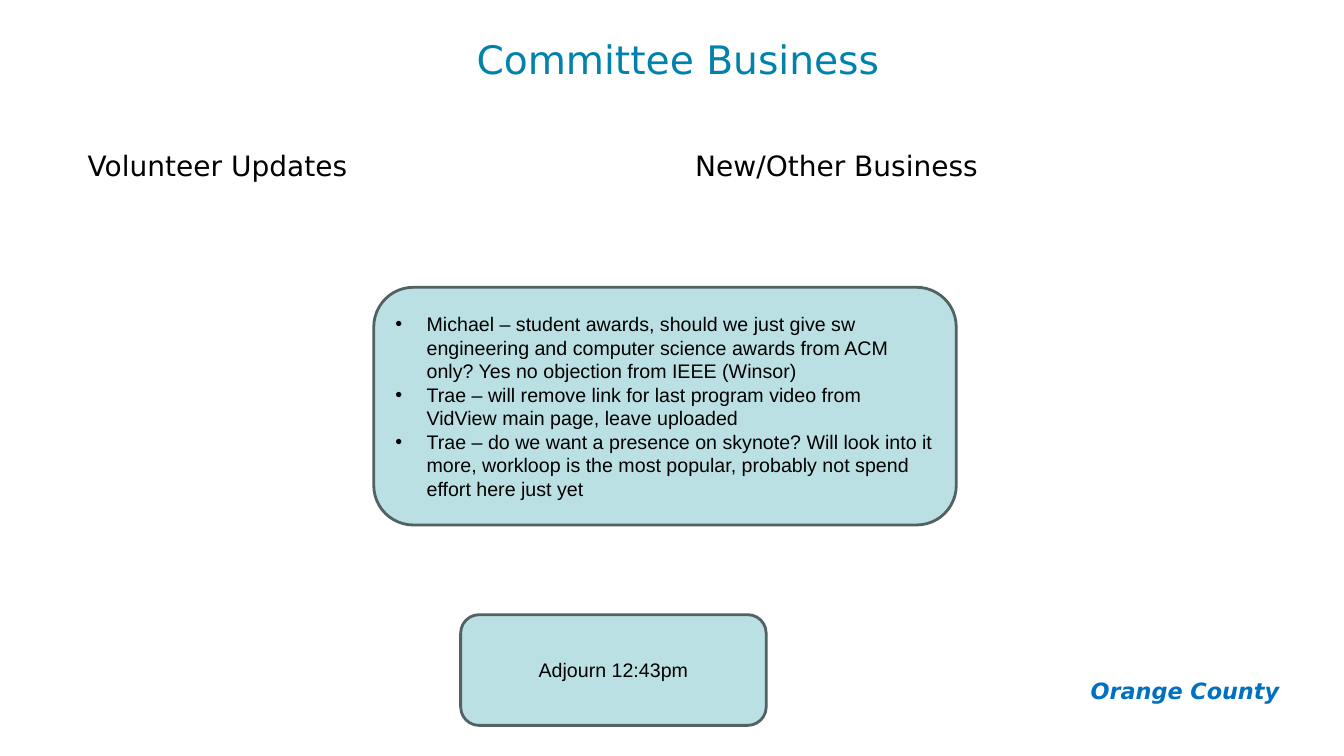
import pptx
import pptx.util
import pptx.dml.color
import pptx.enum.shapes
import pptx.enum.text
from lxml import etree
from pptx.oxml.ns import qn

Cm = pptx.util.Cm
Pt = pptx.util.Pt
RGBColor = pptx.dml.color.RGBColor
Align = pptx.enum.text.PP_ALIGN
Anchor = pptx.enum.text.MSO_ANCHOR

BLACK = RGBColor(0x00, 0x00, 0x00)
TEAL = RGBColor(0x01, 0x82, 0xAC)
BLUE = RGBColor(0x00, 0x70, 0xC0)
PALE_TEAL = RGBColor(0xBB, 0xE0, 0xE3)
SLATE = RGBColor(0x52, 0x62, 0x63)


class SlideBuilder:
    heading_font = "DejaVu Sans"
    note_font = "Arial"
    note_size = 14
    bullet_indent = Cm(0.79)

    def __init__(self, slide):
        self.slide = slide

    def add_text(self, paragraph, text, font_name, size, color, align, emphasis=False):
        paragraph.alignment = align
        run = paragraph.add_run()
        run.text = text
        run.font.name = font_name
        run.font.size = Pt(size)
        run.font.color.rgb = color
        run.font.bold = run.font.italic = emphasis

    def add_bullet(self, paragraph):
        properties = paragraph._p.get_or_add_pPr()
        properties.set("marL", str(self.bullet_indent))
        properties.set("indent", str(-self.bullet_indent))
        font = etree.SubElement(properties, qn("a:buFont"))
        font.set("typeface", self.note_font)
        bullet = etree.SubElement(properties, qn("a:buChar"))
        bullet.set("char", "•")

    def add_heading(self, text, left, top, width, height, size, color,
                    align=Align.LEFT, emphasis=False, margin=0.13):
        box = self.slide.shapes.add_textbox(Cm(left), Cm(top), Cm(width), Cm(height))
        frame = box.text_frame
        frame.word_wrap = True
        frame.margin_top = frame.margin_bottom = Cm(margin)
        self.add_text(frame.paragraphs[0], text, self.heading_font, size, color,
                      align, emphasis)

    def add_note(self, lines, left, top, width, height, bulleted=False):
        shape = self.slide.shapes.add_shape(
            pptx.enum.shapes.MSO_SHAPE.ROUNDED_RECTANGLE,
            Cm(left), Cm(top), Cm(width), Cm(height))
        shape.shadow.inherit = False
        shape.fill.solid()
        shape.fill.fore_color.rgb = PALE_TEAL
        shape.line.color.rgb = SLATE
        shape.line.width = Pt(2)
        frame = shape.text_frame
        frame.word_wrap = True
        frame.vertical_anchor = Anchor.MIDDLE
        for index, line in enumerate(lines):
            paragraph = frame.add_paragraph() if index else frame.paragraphs[0]
            if bulleted:
                self.add_bullet(paragraph)
            self.add_text(paragraph, line, self.note_font, self.note_size, BLACK,
                          Align.LEFT if bulleted else Align.CENTER)


def main():
    presentation = pptx.Presentation()
    presentation.slide_width = Cm(33.87)
    presentation.slide_height = Cm(19.05)
    builder = SlideBuilder(presentation.slides.add_slide(presentation.slide_layouts[6]))

    builder.add_heading("Orange County", 26.7, 16.81, 5.79, 1.19, 16, BLUE,
                        Align.RIGHT, emphasis=True, margin=0.25)
    builder.add_heading("Committee Business", 1.98, 0.76, 30.2, 3.18, 28, TEAL,
                        Align.CENTER)
    for text, left in (("Volunteer Updates", 1.96), ("New/Other Business", 17.27)):
        builder.add_heading(text, left, 3.6, 13.49, 2.08, 20, BLACK)

    builder.add_note([
        "Michael – student awards, should we just give sw engineering and "
        "computer science awards from ACM only? Yes no objection from IEEE (Winsor)",
        "Trae – will remove link for last program video from VidView main page, "
        "leave uploaded",
        "Trae – do we want a presence on skynote? Will look into it more, "
        "workloop is the most popular, probably not spend effort here just yet",
    ], 9.42, 7.24, 14.68, 5.99, bulleted=True)
    builder.add_note(["Adjourn 12:43pm"], 11.61, 15.49, 7.7, 2.79)

    presentation.save("out.pptx")


if __name__ == "__main__":
    main()
